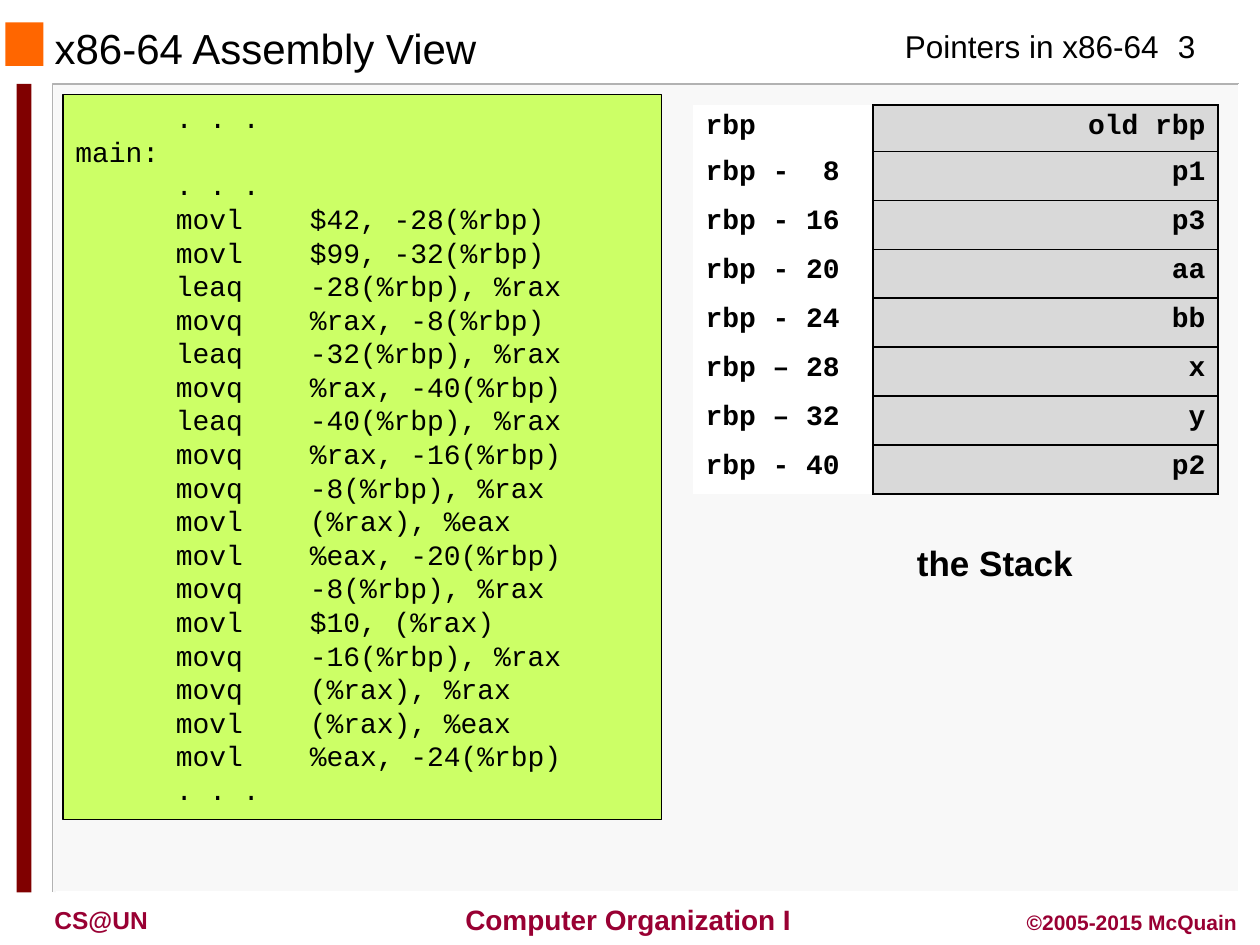
from lxml.etree import SubElement
from pptx import Presentation
from pptx.dml.color import RGBColor
from pptx.enum.shapes import MSO_SHAPE as Preset
from pptx.enum.text import MSO_ANCHOR as Anchor, MSO_AUTO_SIZE as AutoSize, PP_ALIGN as Align
from pptx.oxml.ns import qn
from pptx.util import Pt

COLORS = {
    "black": "000000", "white": "FFFFFF", "panel": "F8F8F8", "edge": "B2B2B2",
    "orange": "FF6600", "maroon": "800000", "footer": "990033",
    "code": "CCFF66", "cell": "D9D9D9",
}
NO_STYLE_GRID = "{2D5ABB26-0587-4C30-8999-92F81FD0307C}"
CODE_FONT = {"name": "Courier New", "size": Pt(16)}

INSTRUCTIONS = [
    ("movl", "$42, -28(%rbp)"), ("movl", "$99, -32(%rbp)"),
    ("leaq", "-28(%rbp), %rax"), ("movq", "%rax, -8(%rbp)"),
    ("leaq", "-32(%rbp), %rax"), ("movq", "%rax, -40(%rbp)"),
    ("leaq", "-40(%rbp), %rax"), ("movq", "%rax, -16(%rbp)"),
    ("movq", "-8(%rbp), %rax"), ("movl", "(%rax), %eax"),
    ("movl", "%eax, -20(%rbp)"), ("movq", "-8(%rbp), %rax"),
    ("movl", "$10, (%rax)"), ("movq", "-16(%rbp), %rax"),
    ("movq", "(%rax), %rax"), ("movl", "(%rax), %eax"),
    ("movl", "%eax, -24(%rbp)"),
]
STACK = [
    ("rbp", "old rbp"), ("rbp -  8", "p1"), ("rbp - 16", "p3"),
    ("rbp - 20", "aa"), ("rbp - 24", "bb"), ("rbp – 28", "x"),
    ("rbp – 32", "y"), ("rbp - 40", "p2"),
]


def rgb(color):
    return RGBColor.from_string(COLORS[color])


class SlideBuilder:
    def __init__(self, slide):
        self.slide = slide
        self.shapes = slide.shapes
        self.font = {"name": "Arial", "size": Pt(18), "bold": False}

    def fill_text(self, frame, lines, color="black", align=Align.LEFT, **font):
        frame.text = "\n".join(lines)
        for paragraph in frame.paragraphs:
            paragraph.alignment = align
            for run in paragraph.runs:
                for key, value in {**self.font, **font}.items():
                    setattr(run.font, key, value)
                run.font.color.rgb = rgb(color)

    def title(self, text, box):
        shape = self.shapes.title
        for key, value in zip(("left", "top", "width", "height"), box):
            setattr(shape, key, Pt(value))
        frame = shape.text_frame
        frame.auto_size = AutoSize.NONE
        frame.vertical_anchor = Anchor.MIDDLE
        self.fill_text(frame, [text], size=Pt(24))

    def text(self, text, box, wrap=True, **style):
        frame = self.shapes.add_textbox(*map(Pt, box)).text_frame
        frame.word_wrap = wrap
        self.fill_text(frame, [text], **style)

    def rectangle(self, box, fill, line=None):
        shape = self.shapes.add_shape(Preset.RECTANGLE, *map(Pt, box))
        shape.shadow.inherit = False
        shape.fill.solid()
        shape.fill.fore_color.rgb = rgb(fill)
        if line:
            shape.line.color.rgb = rgb(line)
            shape.line.width = Pt(0.75)
        else:
            shape.line.fill.background()
        return shape

    def corner(self, points, color):
        """Draw an open outline along two sides of the panel."""
        builder = self.shapes.build_freeform(*points[0], scale=Pt(1))
        builder.add_line_segments(points[1:], close=False)
        shape = builder.convert_to_shape()
        shape.shadow.inherit = False
        shape.fill.background()
        shape.line.color.rgb = rgb(color)
        shape.line.width = Pt(1)

    def code(self, lines, box):
        frame = self.rectangle(box, "code", line="black").text_frame
        frame.word_wrap = True
        frame.vertical_anchor = Anchor.TOP
        self.fill_text(frame, lines, **CODE_FONT)

    def border(self, cell, sides):
        properties = cell._tc.get_or_add_tcPr()
        for side in sides:
            line = SubElement(properties, qn(f"a:ln{side}"), w=str(Pt(1)))
            fill = SubElement(line, qn("a:solidFill"))
            SubElement(fill, qn("a:srgbClr"), val=COLORS["black"])

    def table(self, rows, box, widths, heights):
        frame = self.shapes.add_table(len(rows), len(widths), *map(Pt, box))
        table = frame.table
        table.first_row = table.horz_banding = False
        table._tbl.tblPr.find(qn("a:tableStyleId")).text = NO_STYLE_GRID
        for column, width in zip(table.columns, widths):
            column.width = Pt(width)
        formats = [("white", Align.LEFT, "R"), ("cell", Align.RIGHT, "LRTB")]
        for row, height, texts in zip(table.rows, heights, rows):
            row.height = Pt(height)
            for cell, text, (fill, align, sides) in zip(row.cells, texts, formats):
                self.border(cell, sides)
                cell.fill.solid()
                cell.fill.fore_color.rgb = rgb(fill)
                self.fill_text(cell.text_frame, [text], align=align, bold=True, **CODE_FONT)


def main():
    presentation = Presentation()
    presentation.slide_width, presentation.slide_height = Pt(720), Pt(540)
    slide = presentation.slides.add_slide(presentation.slide_layouts[5])
    builder = SlideBuilder(slide)

    left, top, right, bottom = 30.5, 48, 707.5, 510
    builder.rectangle((left, top, right - left, bottom - top), "panel")
    builder.corner([(right, top), (left, top), (left, bottom)], "edge")
    builder.corner([(right, top), (right, bottom), (left + 1, bottom)], "white")
    builder.rectangle((3, 12.75, 21.75, 25), "orange")
    builder.rectangle((9.5, 48, 8.5, 462), "maroon")

    builder.title("x86-64 Assembly View", (24, 14, 456, 27))
    builder.text("Pointers in x86-64", (510, 12, 161, 29), wrap=False)
    builder.text("3", (654, 12, 48, 29), align=Align.CENTER)

    footer = {"color": "footer", "bold": True}
    builder.text("CS@UN", (24, 513.5, 108, 24), size=Pt(14), **footer)
    builder.text("Computer Organization I", (254, 512, 210, 27), wrap=False,
                 size=Pt(16), align=Align.CENTER, **footer)
    builder.text("©2005-2015 McQuain", (564, 516, 150, 22), size=Pt(12),
                 align=Align.RIGHT, **footer)

    indent = " " * 6
    pause = f"{indent}. . ."
    body = [f"{indent}{name:8}{operands}" for name, operands in INSTRUCTIONS]
    builder.code([pause, "main:", pause, *body, pause], (36, 54, 342, 414.5))

    heights = [26.5] + [28] * (len(STACK) - 1)
    widths = [103, 197]
    builder.table(STACK, (396, 60, sum(widths), sum(heights)), widths, heights)
    builder.text("the Stack", (498, 306, 141, 31.5), size=Pt(20), bold=True,
                 align=Align.CENTER)

    presentation.save("out.pptx")


if __name__ == "__main__":
    main()
